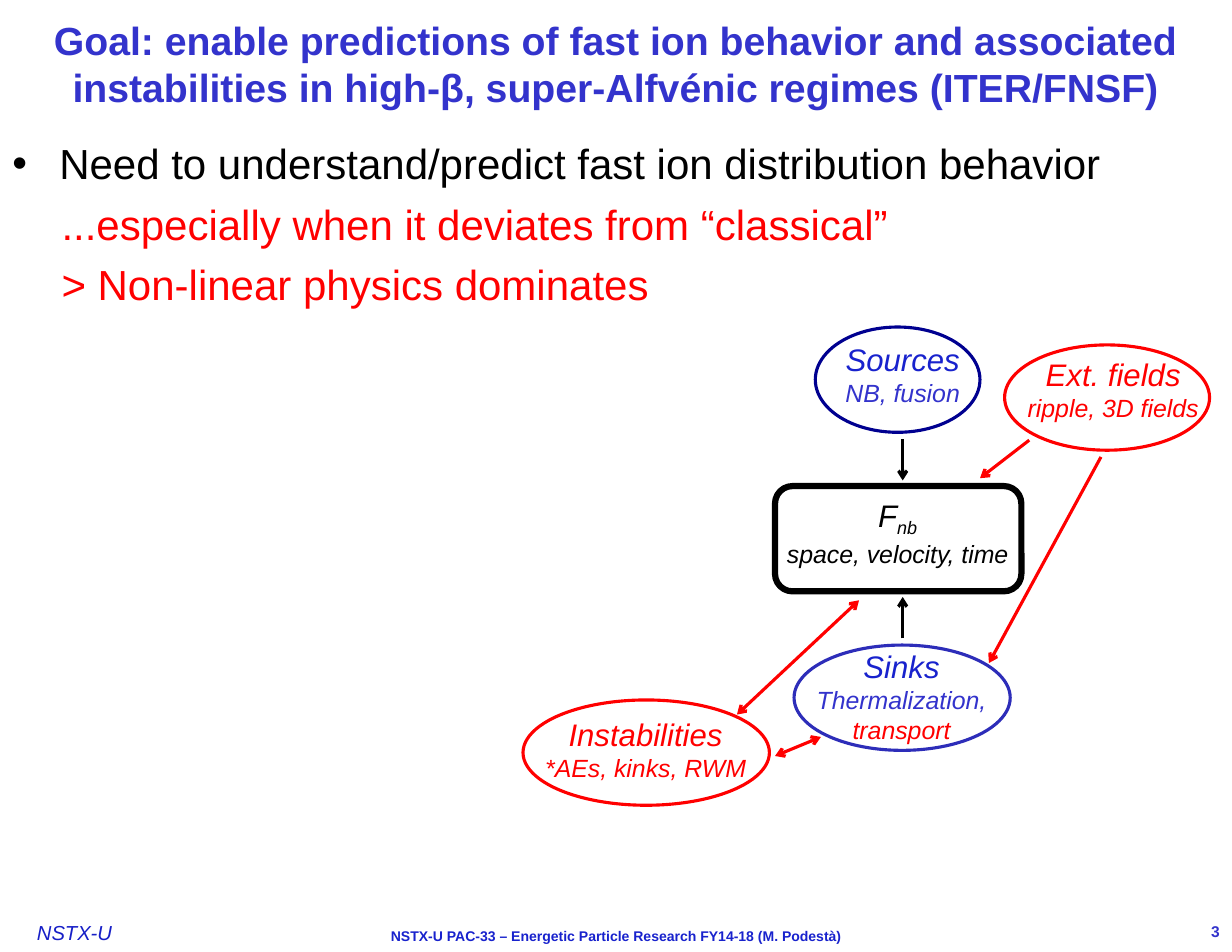
from lxml import etree
from pptx import Presentation
from pptx.dml.color import RGBColor
from pptx.enum.shapes import MSO_CONNECTOR as CONN, MSO_SHAPE as SHAPE
from pptx.enum.text import MSO_ANCHOR as ANCHOR, PP_ALIGN as ALIGN
from pptx.oxml.ns import qn
from pptx.util import Inches, Pt

COLORS = {
    "black": "000000", "red": "FF0000", "title": "3333CC", "blue": "1822CD",
    "logo": "171FC7", "navy": "000090", "sinks": "2D2DB9",
}


class Deck:
    """Builds the slide in one shared style."""

    def __init__(self, width, height, font="Arial"):
        self.prs = Presentation()
        self.prs.slide_width, self.prs.slide_height = Inches(width), Inches(height)
        self.font = font
        self.slide = self.prs.slides.add_slide(self.prs.slide_layouts[6])

    def color(self, name):
        return RGBColor.from_string(COLORS[name])

    def style(self, r, size, color, bold=False, italic=False):
        f = r.font
        f.name, f.size, f.bold, f.italic = self.font, Pt(size), bold, italic
        f.color.rgb = self.color(color)

    def text(self, box, lines, align=ALIGN.LEFT, anchor=ANCHOR.TOP, inset=(0.11, 0.06),
             wrap=True, bold=False, italic=False, shapes=None):
        s = (shapes or self.slide.shapes).add_textbox(*map(Inches, box))
        tf = s.text_frame
        tf.word_wrap, tf.vertical_anchor = wrap, anchor
        tf.margin_left = tf.margin_right = Inches(inset[0])
        tf.margin_top = tf.margin_bottom = Inches(inset[1])
        tf.text = "\n".join(line[0] for line in lines)
        for p, (_, size, color) in zip(tf.paragraphs, lines):
            p.alignment = align
            self.style(p.runs[0], size, color, bold, italic)
        return tf

    def body(self, box, lines, indents, gap):
        tf = self.text(box, lines)
        for i, (p, (left, hang)) in enumerate(zip(tf.paragraphs, indents)):
            pPr = p._p.get_or_add_pPr()
            pPr.set("marL", str(Inches(left)))
            pPr.set("indent", str(Inches(-hang)))
            if i:
                p.space_before = Pt(gap)
                etree.SubElement(pPr, qn("a:buNone"))
            else:
                etree.SubElement(pPr, qn("a:buFont")).set("typeface", self.font)
                etree.SubElement(pPr, qn("a:buChar")).set("char", "•")

    def node(self, kind, box, line, width, label_box, lines):
        g = self.slide.shapes.add_group_shape()
        s = g.shapes.add_shape(kind, *map(Inches, box))
        s.shadow.inherit = False
        s.fill.background()
        s.line.color.rgb = self.color(line)
        s.line.width = Pt(width)
        return self.text(label_box, lines, ALIGN.CENTER, inset=(0.1, 0.05),
                         wrap=False, italic=True, shapes=g.shapes)

    def subscript(self, p, text, size, color):
        r = p.add_run()
        r.text = text
        self.style(r, size, color, italic=True)
        r.font._element.set("baseline", "-25000")

    def arrow(self, start, end, color, both=False):
        c = self.slide.shapes.add_connector(CONN.STRAIGHT, *map(Inches, start + end))
        c.line.color.rgb = self.color(color)
        c.line.width = Pt(2)
        ln = c.line._get_or_add_ln()
        for tag in ("a:headEnd", "a:tailEnd") if both else ("a:tailEnd",):
            etree.SubElement(ln, qn(tag)).set("type", "arrow")
        etree.SubElement(c._element.spPr, qn("a:effectLst"))


def main():
    d = Deck(11, 8.5)
    d.text((0.33, 8.22, 0.95, 0.22), [("NSTX-U", 13, "logo")], inset=(0, 0), italic=True)
    d.text((2.2, 8.22, 6.6, 0.42),
           [("NSTX-U PAC-33 – Energetic Particle Research FY14-18 (M. Podestà)", 9, "blue")],
           ALIGN.CENTER, bold=True)
    d.text((0, 0, 11, 1.13),
           [("Goal: enable predictions of fast ion behavior and associated "
             "instabilities in high-β, super-Alfvénic regimes (ITER/FNSF)", 25.2, "title")],
           ALIGN.CENTER, ANCHOR.MIDDLE, bold=True)
    d.body((0, 1.17, 11, 2.55),
           [("Need to understand/predict fast ion distribution behavior", 27, "black"),
            ("...especially when it deviates from “classical”", 27, "red"),
            ("> Non-linear physics dominates", 27, "red")],
           [(0.42, 0.42), (0.76, 0.32), (0.76, 0.32)], 6.5)
    d.text((10.08, 8.22, 0.92, 0.19), [("3", 10, "title")], ALIGN.RIGHT, ANCHOR.MIDDLE,
           bold=True)

    d.node(SHAPE.OVAL, (7.28, 2.92, 1.47, 0.94), "navy", 2, (7.41, 2.99, 1.3, 0.72),
           [("Sources", 20, "blue"), ("NB, fusion", 16, "title")])
    tf = d.node(SHAPE.ROUNDED_RECTANGLE, (6.92, 4.34, 2.2, 0.94), "black", 4,
                (6.89, 4.38, 2.25, 0.71),
                [("F", 20, "black"), ("space, velocity, time", 16, "black")])
    d.subscript(tf.paragraphs[0], "nb", 20, "black")
    d.node(SHAPE.OVAL, (7.09, 5.76, 1.93, 0.94), "sinks", 2, (7.16, 5.73, 1.78, 0.98),
           [("Sinks", 20, "blue"), ("Thermalization,", 16, "title"), ("transport", 16, "red")])
    d.node(SHAPE.OVAL, (4.67, 6.25, 2.2, 0.94), "red", 2, (4.73, 6.34, 2.07, 0.71),
           [("Instabilities", 20, "red"), ("*AEs, kinks, RWM", 16, "red")])
    d.node(SHAPE.OVAL, (8.97, 3.08, 1.83, 0.94), "red", 2, (9.04, 3.12, 1.8, 0.71),
           [("Ext. fields", 20, "red"), ("ripple, 3D fields", 16, "red")])

    d.arrow((8.06, 3.92), (8.06, 4.29), "black")
    d.arrow((8.06, 5.7), (8.06, 5.33), "black")
    d.arrow((6.58, 6.38), (7.67, 5.36), "red", both=True)
    d.arrow((6.92, 6.75), (7.33, 6.58), "red", both=True)
    d.arrow((9.19, 3.93), (8.75, 4.27), "red")
    d.arrow((9.83, 4.08), (8.83, 5.92), "red")
    d.prs.save("out.pptx")


if __name__ == "__main__":
    main()
